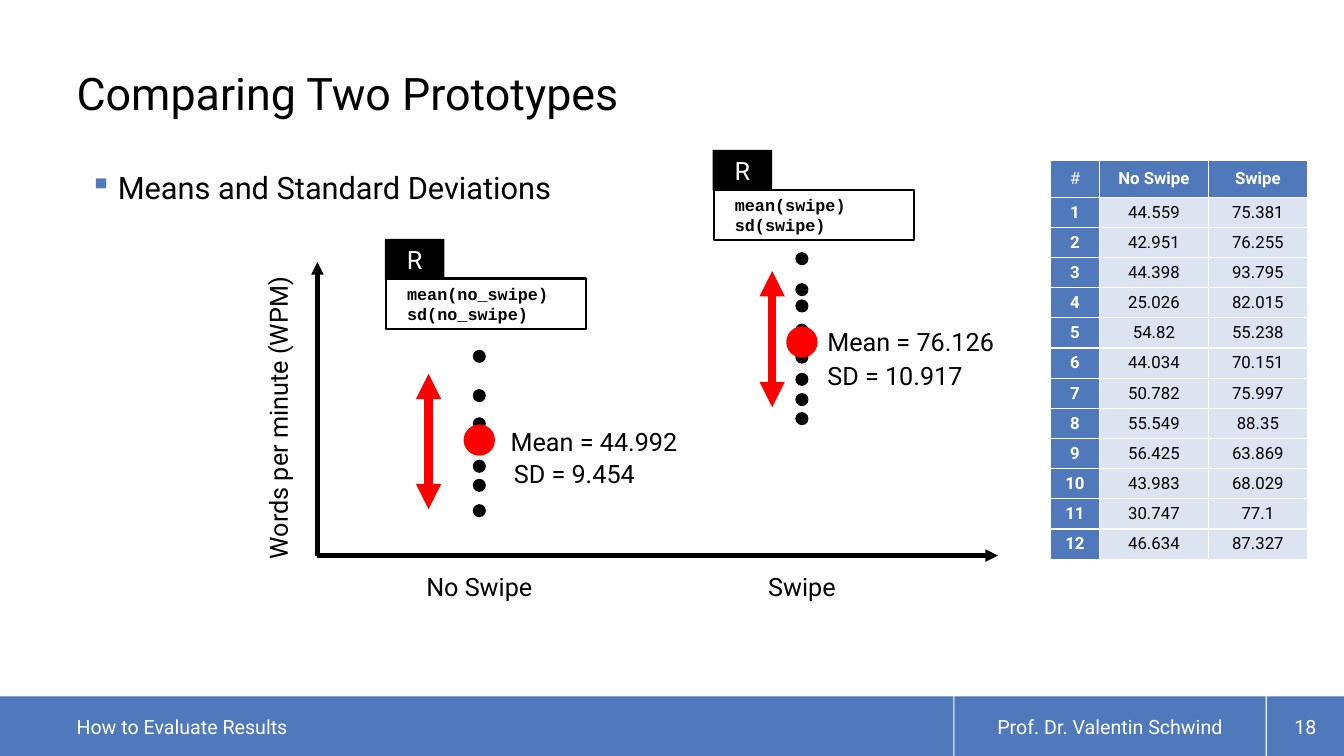
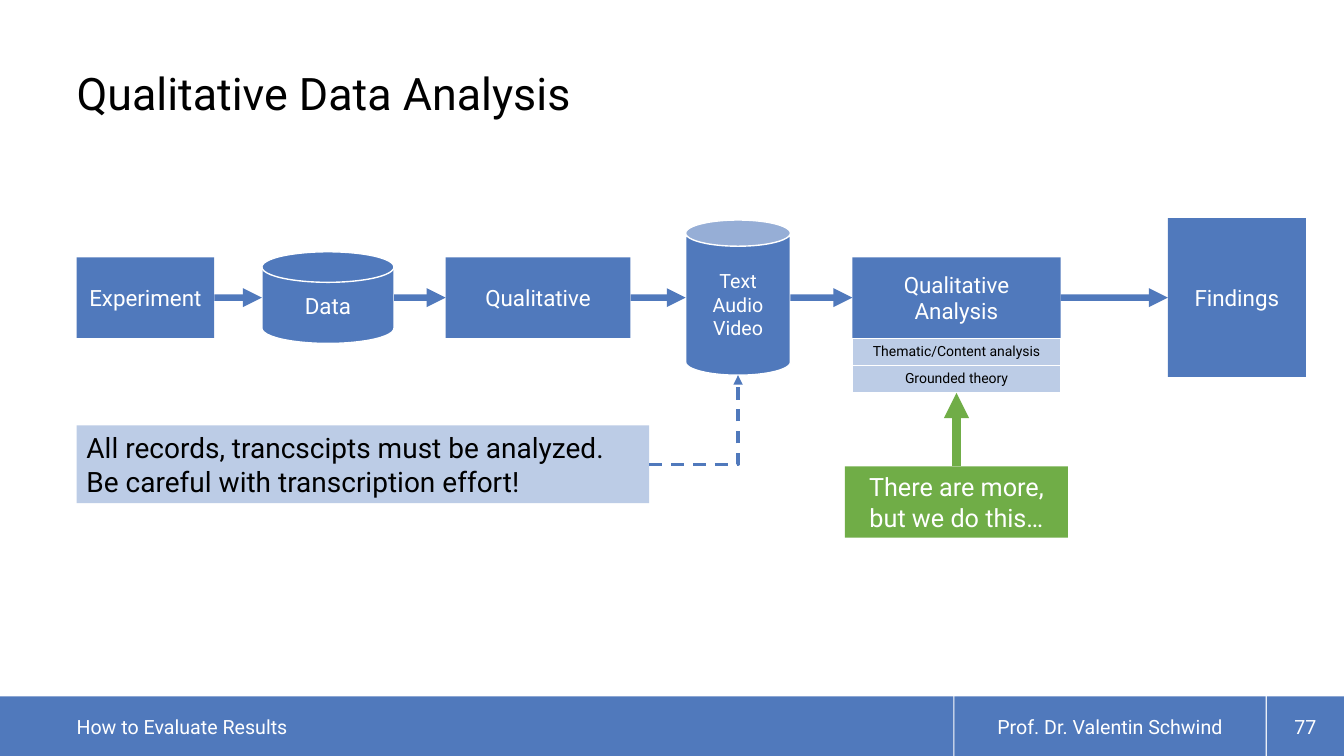
from dataclasses import dataclass
from typing import Optional

from lxml import etree
from pptx import Presentation, oxml, util as u
from pptx import dml as _dml
from pptx.dml import color as clr
from pptx.enum import dml, shapes, text
from pptx.oxml import ns

COLORS = {
    "blue": "5079BC", "pale": "BCCCE6", "cell": "DCE4F2", "green": "70AD47",
    "red": "FF0000", "black": "000000", "white": "FFFFFF",
}
FONT, CODE_FONT = "Roboto", "Courier New"
SLIDE_W, SLIDE_H, MARGIN = 33.87, 19.05, 1.93
LINE_H = 1.02  # height of a one-line label
KIND, ALIGN, ANCHOR = shapes.MSO_SHAPE, text.PP_ALIGN, text.MSO_ANCHOR


@dataclass
class Band:
    left: float
    width: float
    align: text.PP_ALIGN = ALIGN.CENTER
    inset: float = 0


@dataclass
class Prototype:
    name: str
    variable: str
    x: float
    dots: list[float]
    mean_y: float
    spread: tuple[float, float, float]  # x, top, bottom
    mean: str
    mean_at: tuple[float, float]
    sd: str
    sd_at: tuple[float, float]
    code_at: tuple[float, float]


@dataclass
class Stage:
    label: str
    left: float
    width: float
    height: float = 2.03
    kind: shapes.MSO_SHAPE = KIND.RECTANGLE
    size: int = 16

    @property
    def right(self) -> float:
        return self.left + self.width


FOOTER = [Band(0, 24.03, ALIGN.LEFT, MARGIN), Band(24.05, 7.85), Band(31.93, 1.94)]

PROTOTYPES = [
    Prototype("No Swipe", "no_swipe", 12.08,
              [12.87, 12.23, 11.75, 10.83, 9.97, 8.98, 11.24, 10.68], 11.09,
              (10.8, 9.42, 12.83), "Mean = 44.992", (12.62, 10.62),
              "SD = 9.454", (12.7, 11.43), (9.7, 6.02)),
    Prototype("Swipe", "swipe", 20.21,
              [8.32, 10.55, 10.07, 6.52, 7.71, 7.3, 9.56, 9.0], 8.62,
              (19.46, 6.83, 10.26), "Mean = 76.126", (20.6, 8.1),
              "SD = 10.917", (20.6, 8.94), (17.96, 3.78)),
]

SPEEDS = [
    ("44.559", "75.381"), ("42.951", "76.255"), ("44.398", "93.795"),
    ("25.026", "82.015"), ("54.82", "55.238"), ("44.034", "70.151"),
    ("50.782", "75.997"), ("55.549", "88.35"), ("56.425", "63.869"),
    ("43.983", "68.029"), ("30.747", "77.1"), ("46.634", "87.327"),
]

STAGES = [
    Stage("Experiment", 1.93, 3.47),
    Stage("Data", 6.6, 3.33, 2.31, KIND.FLOWCHART_MAGNETIC_DISK),
    Stage("Qualitative", 11.23, 4.66),
    Stage("Text\nAudio\nVideo", 17.28, 2.64, 3.91, KIND.CAN, 14),
    Stage("Qualitative Analysis", 21.48, 5.25),
    Stage("Findings", 29.43, 3.48, 4.0),
]


def rgb(name: str) -> clr.RGBColor:
    return clr.RGBColor.from_string(COLORS[name])


def write(frame, content: str, *, size: int, color: str = "black", font: str = FONT,
          bold: bool = False, align=ALIGN.LEFT, anchor=ANCHOR.MIDDLE, wrap: bool = True,
          margins: Optional[tuple] = None, spacing: Optional[float] = None) -> None:
    """Fill a text frame, one paragraph for each line of content."""
    frame.word_wrap = wrap
    frame.auto_size = text.MSO_AUTO_SIZE.NONE
    frame.vertical_anchor = anchor
    if margins:
        (frame.margin_left, frame.margin_top,
         frame.margin_right, frame.margin_bottom) = map(u.Cm, margins)
    for i, line in enumerate(content.split("\n")):
        paragraph = frame.paragraphs[0] if i == 0 else frame.add_paragraph()
        paragraph.alignment = align
        if spacing:
            paragraph.line_spacing = spacing
        run = paragraph.add_run()
        run.text = line
        run.font.name, run.font.size, run.font.bold = font, u.Pt(size), bold
        run.font.color.rgb = rgb(color)


def add_label(slide, content: str, left: float, top: float, width: float,
              height: float = LINE_H, **style):
    label = slide.shapes.add_textbox(*map(u.Cm, (left, top, width, height)))
    write(label.text_frame, content, **style)
    return label


def add_block(slide, kind, left: float, top: float, width: float, height: float,
              fill: str, outline: Optional[str] = None, weight: float = 1):
    block = slide.shapes.add_shape(kind, *map(u.Cm, (left, top, width, height)))
    block.shadow.inherit = False
    block.fill.solid()
    block.fill.fore_color.rgb = rgb(fill)
    if outline:
        block.line.color.rgb = rgb(outline)
        block.line.width = u.Pt(weight)
    else:
        block.line.fill.background()
    return block


def add_dot(slide, x: float, y: float, diameter: float, fill: str) -> None:
    add_block(slide, KIND.OVAL, x - diameter / 2, y - diameter / 2, diameter, diameter, fill)


def add_arrow(slide, start: tuple, end: tuple, color: str, weight: float,
              kind=shapes.MSO_CONNECTOR.STRAIGHT, dashed: bool = False,
              both_ends: bool = False):
    arrow = slide.shapes.add_connector(kind, *map(u.Cm, (*start, *end)))
    arrow.line.color.rgb = rgb(color)
    arrow.line.width = u.Pt(weight)
    if dashed:
        arrow.line.dash_style = dml.MSO_LINE.DASH
    properties = arrow._element.spPr
    outline = properties.find(ns.qn("a:ln"))
    for tag in ("a:headEnd", "a:tailEnd") if both_ends else ("a:tailEnd",):
        etree.SubElement(outline, ns.qn(tag), type="triangle")
    etree.SubElement(properties, ns.qn("a:effectLst"))
    return arrow


def fill_cell(cell, content: str, fill: str, **style) -> None:
    """Write a centred cell with thin white borders."""
    cell.vertical_anchor = ANCHOR.MIDDLE
    properties = cell._tc.get_or_add_tcPr()
    for side in ("L", "R", "T", "B"):
        border = etree.SubElement(properties, ns.qn(f"a:ln{side}"), w=str(u.Pt(1)))
        paint = etree.SubElement(border, ns.qn("a:solidFill"))
        etree.SubElement(paint, ns.qn("a:srgbClr"), val=COLORS["white"])
    cell.fill.solid()
    cell.fill.fore_color.rgb = rgb(fill)
    paragraph = cell.text_frame.paragraphs[0]
    paragraph.alignment = ALIGN.CENTER
    run = paragraph.add_run()
    run.text = content
    run.font.name, run.font.size = FONT, u.Pt(style["size"])
    run.font.bold = style.get("bold", False)
    run.font.color.rgb = rgb(style["color"])


def add_grid(slide, left: float, top: float, widths: list[float], heights: list[float]):
    grid = slide.shapes.add_table(
        len(heights), len(widths),
        *map(u.Cm, (left, top, sum(widths), sum(heights)))).table
    for column, width in zip(grid.columns, widths):
        column.width = u.Cm(width)
    for row, height in zip(grid.rows, heights):
        row.height = u.Cm(height)
    return grid


def add_base_slide(deck, title: str, number: int):
    """Add a slide with its title and footer bands."""
    slide = deck.slides.add_slide(deck.slide_layouts[5])
    heading = slide.shapes.title
    heading.left, heading.top, heading.width, heading.height = map(
        u.Cm, (MARGIN, 0.33, 30, 2.69))
    write(heading.text_frame, title, size=32, anchor=ANCHOR.BOTTOM,
          margins=(0, 0, 0, 0), spacing=0.9)
    captions = ("How to Evaluate Results", "Prof. Dr. Valentin Schwind", str(number))
    for band, caption in zip(FOOTER, captions):
        block = add_block(slide, KIND.RECTANGLE, band.left, 17.55, band.width, 1.5, "blue")
        write(block.text_frame, caption, size=14, color="white", align=band.align,
              margins=(band.inset, 0, 0, 0))
    return slide


def add_bullet(slide, content: str) -> None:
    bullet = add_label(slide, content, MARGIN, 4.04, 15, 1.5, size=22,
                       anchor=ANCHOR.TOP, spacing=1.1)
    properties = bullet.text_frame.paragraphs[0]._p.get_or_add_pPr()
    properties.set("marL", str(u.Cm(0.79)))
    properties.set("indent", str(u.Cm(-0.71)))
    tint = etree.SubElement(properties, ns.qn("a:buClr"))
    etree.SubElement(tint, ns.qn("a:srgbClr"), val=COLORS["blue"])
    etree.SubElement(properties, ns.qn("a:buChar"), char="▪")


def add_prototype(slide, proto: Prototype) -> None:
    for y in proto.dots:
        add_dot(slide, proto.x, y, 0.33, "black")
    add_dot(slide, proto.x, proto.mean_y, 0.79, "red")
    x, top, bottom = proto.spread
    add_arrow(slide, (x, top), (x, bottom), "red", 6, both_ends=True)
    add_label(slide, proto.name, proto.x - 2, 14.27, 4, size=18, align=ALIGN.CENTER)
    for caption, place in ((proto.mean, proto.mean_at), (proto.sd, proto.sd_at)):
        add_label(slide, caption, *place, 4.75, size=18, wrap=False)

    # R code with its tab
    left, top = proto.code_at
    code = add_block(slide, KIND.RECTANGLE, left + 0.03, top + 1, 5.05, 1.27,
                     "white", "black", 1.5)
    write(code.text_frame, f"mean({proto.variable})\nsd({proto.variable})", size=12,
          font=CODE_FONT, bold=True, margins=(0.53, 0.13, 0.25, 0.13))
    tab = add_block(slide, KIND.RECTANGLE, left, top, 1.5, LINE_H, "black")
    write(tab.text_frame, "R", size=18, color="white", align=ALIGN.CENTER)


def build_comparison(deck) -> None:
    slide = add_base_slide(deck, "Comparing Two Prototypes", 18)
    add_bullet(slide, "Means and Standard Deviations")

    # Axes
    origin = (8, 14)
    for axis_end in ((8, 6.6), (25.15, 14)):
        add_arrow(slide, origin, axis_end, "black", 3)
    axis_title = add_label(slide, "Words per minute (WPM)", 3.15, 9.98, 7.7,
                           size=18, wrap=False)
    axis_title.rotation = 270

    for proto in PROTOTYPES:
        add_prototype(slide, proto)

    # Measured speeds
    grid = add_grid(slide, 26.47, 4.04, [1.24, 2.74, 2.5], [0.93] + [0.76] * len(SPEEDS))
    rows = [("#", "No Swipe", "Swipe")]
    rows += [(str(i), *pair) for i, pair in enumerate(SPEEDS, 1)]
    for r, row in enumerate(rows):
        for c, value in enumerate(row):
            header = r == 0 or c == 0
            fill_cell(grid.cell(r, c), value, "blue" if header else "cell", size=12,
                      color="white" if header else "black", bold=header and value != "#")


def build_analysis(deck) -> None:
    slide = add_base_slide(deck, "Qualitative Data Analysis", 77)
    flow_y = 7.5

    # Stages and the arrows between them
    blocks = []
    for stage in STAGES:
        outline = None if stage.kind == KIND.RECTANGLE else "white"
        block = add_block(slide, stage.kind, stage.left, flow_y - stage.height / 2,
                          stage.width, stage.height, "blue", outline)
        write(block.text_frame, stage.label, size=stage.size, color="white",
              align=ALIGN.CENTER)
        blocks.append(block)
    for i, (source, target) in enumerate(zip(STAGES, STAGES[1:])):
        arrow = add_arrow(slide, (source.right, flow_y), (target.left, flow_y), "blue", 4.5)
        if source.kind == KIND.RECTANGLE:
            arrow.begin_connect(blocks[i], 3)
        if target.kind == KIND.RECTANGLE:
            arrow.end_connect(blocks[i + 1], 1)

    # Methods below the analysis stage
    analysis = STAGES[4]
    methods = add_grid(slide, analysis.left, 8.52, [analysis.width], [0.69, 0.69])
    for r, method in enumerate(("Thematic/Content analysis", "Grounded theory")):
        fill_cell(methods.cell(r, 0), method, "pale", size=10, color="black")
    center = analysis.left + analysis.width / 2
    remark = add_block(slide, KIND.RECTANGLE, center - 2.81, 11.75, 5.62, 1.8, "green")
    write(remark.text_frame, "There are more, but we do this…", size=18, color="white",
          align=ALIGN.CENTER)
    pointer = add_arrow(slide, (center, 11.75), (center, 9.9), "green", 6)
    pointer.begin_connect(remark, 0)

    # Advice on the records
    advice = add_block(slide, KIND.RECTANGLE, MARGIN, 10.72, 14.43, 1.96, "pale")
    write(advice.text_frame,
          "All records, trancscipts must be analyzed. Be careful with transcription effort!",
          size=20)
    records = STAGES[3]
    foot = (records.left + records.width / 2, flow_y + records.height / 2)
    link = add_arrow(slide, (MARGIN + 14.43, 11.7), foot, "blue", 2.25,
                     shapes.MSO_CONNECTOR.ELBOW, dashed=True)
    link._element.spPr.find(ns.qn("a:prstGeom")).set("prst", "bentConnector2")
    link.begin_connect(advice, 3)
    link.end_connect(blocks[3], 3)  # site 3 of a can is its foot
    link.end_x, link.end_y = map(u.Cm, foot)


def main() -> None:
    deck = Presentation()
    deck.slide_width, deck.slide_height = u.Cm(SLIDE_W), u.Cm(SLIDE_H)
    build_comparison(deck)
    build_analysis(deck)
    deck.save("out.pptx")


if __name__ == "__main__":
    main()
